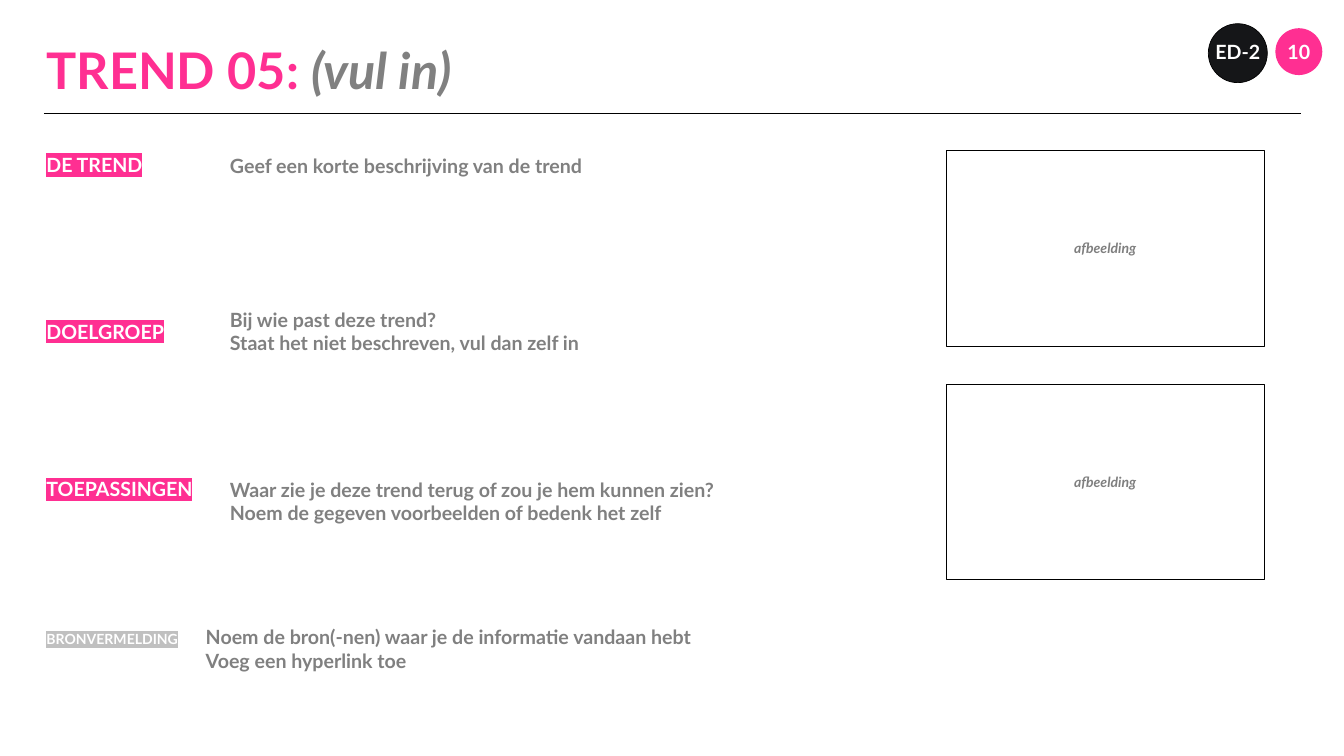
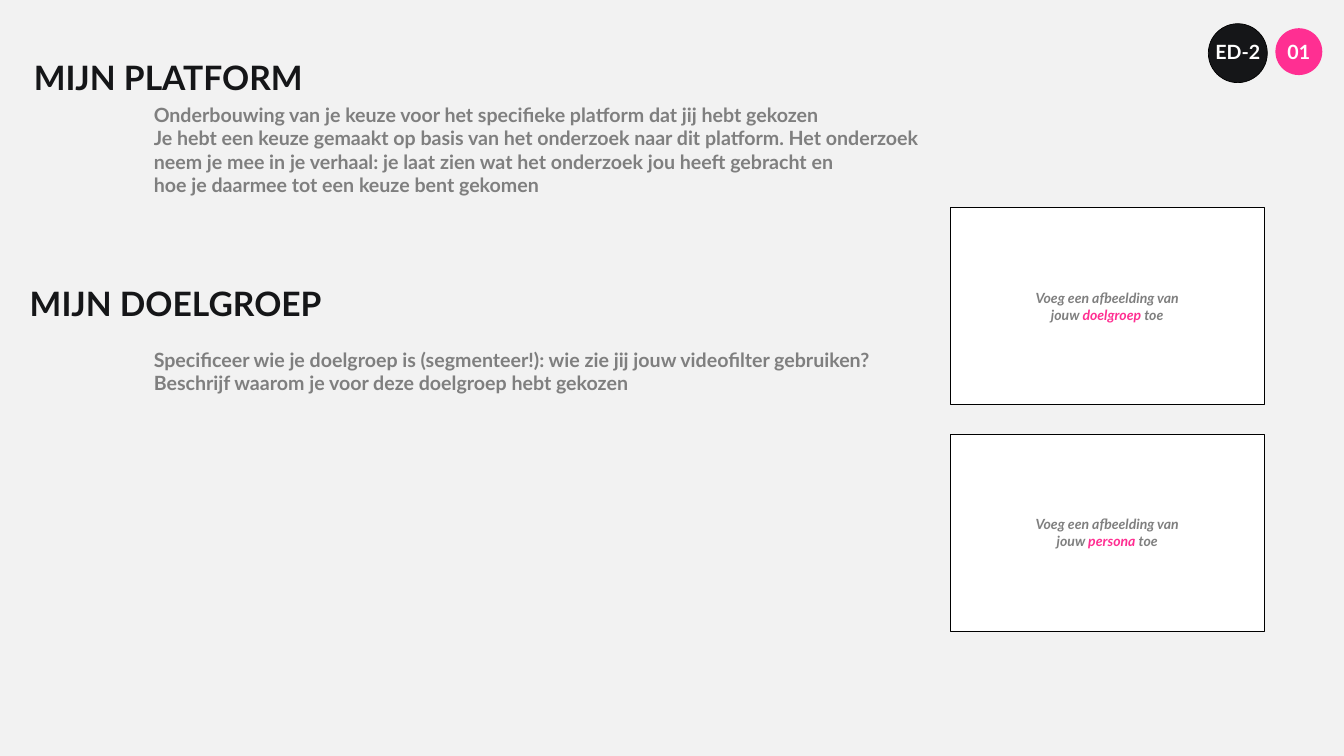
from lxml import etree
from pptx import Presentation
from pptx.dml.color import RGBColor
from pptx.enum import shapes, text
from pptx.oxml.ns import qn
from pptx.util import Emu, Pt

PX = 9144  # 100 px to the inch
WIDE, HIGH = 2665, 1500
FONT = "Lato"
PINK, INK, BLACK, WHITE = "FF2F92", "151618", "000000", "FFFFFF"
GREY, MID, SILVER, PALE = "808080", "7F7F7F", "C0C0C0", "F2F2F2"
BODY, NOTE, HEAD, TITLE = 28, 20, 48, 72
LEFT = 87


def px(*nums):
    return [Emu(n * PX) for n in nums]


def rgb(code):
    return RGBColor.from_string(code)


def style(run, size, color, italic=False, mark=None):
    font = run.font
    font.name, font.size = FONT, Pt(size)
    font.bold, font.italic = True, italic
    font.color.rgb = rgb(color)
    if mark:
        light = etree.Element(qn("a:highlight"))
        etree.SubElement(light, qn("a:srgbClr"), val=mark)
        run._r.rPr.find(qn("a:solidFill")).addnext(light)


def extend(para, words, *look):
    """Add a run with its own look to a paragraph."""
    run = para.add_run()
    run.text = words
    style(run, *look)


def write(shape, words, size, color, italic=False, mark=None, wrap=False,
          align=text.PP_ALIGN.LEFT, grow=True):
    frame = shape.text_frame
    frame.text = words
    frame.word_wrap = wrap
    frame.auto_size = (text.MSO_AUTO_SIZE.SHAPE_TO_FIT_TEXT if grow
                       else text.MSO_AUTO_SIZE.NONE)
    frame.vertical_anchor = (text.MSO_ANCHOR.TOP if wrap
                             else text.MSO_ANCHOR.MIDDLE)
    inset, = px(5 if wrap else 6)
    frame.margin_left = frame.margin_right = inset
    frame.margin_top = frame.margin_bottom = inset
    for para in frame.paragraphs:
        para.alignment = align
        for run in para.runs:
            style(run, size, color, italic, mark)
    return frame


def label(slide, box, words, size, color, **opts):
    return write(slide.shapes.add_textbox(*px(*box)), words, size, color, **opts)


def title(slide, box, words, size, color, **opts):
    shape = slide.shapes.title
    shape.left, shape.top, shape.width, shape.height = px(*box)
    return write(shape, words, size, color, **opts)


def plain(slide, kind, box, fill, line=None):
    shape = slide.shapes.add_shape(kind, *px(*box))
    shape.shadow.inherit = False
    shape.fill.solid()
    shape.fill.fore_color.rgb = rgb(fill)
    if line:
        shape.line.color.rgb = rgb(line)
        shape.line.width = Pt(1)
    else:
        shape.line.fill.background()
    return shape


def badges(slide, number):
    """Draw the course mark and the page number at the top right."""
    for box, fill, line, words in (
            ((2396, 47, 117, 117), INK, BLACK, "ED-2"),
            ((2529, 56, 93, 93), PINK, None, number)):
        disc = plain(slide, shapes.MSO_SHAPE.OVAL, box, fill, line)
        frame = write(disc, words, BODY, WHITE, grow=False,
                      align=text.PP_ALIGN.CENTER)
        # Both texts share one centre line, at 102 px
        low = box[1] + box[3] // 2 - 102
        frame.margin_bottom, = px(6 + 2 * low)


def rule(slide, left, top, right):
    line = slide.shapes.add_connector(
        shapes.MSO_CONNECTOR.STRAIGHT, *px(left, top, right, top))
    line.line.color.rgb = rgb(BLACK)
    line.line.width = Pt(1)
    etree.SubElement(line._element.spPr, qn("a:effectLst"))


def frames(slide, box, pitch, size, words):
    """Stack image frames, each with a caption of the given size centred in it."""
    left, top, wide, high = box
    dx, dy = (wide - size[0]) // 2, (high - size[1]) // 2
    notes = []
    for row, note in enumerate(words):
        y = top + row * pitch
        plain(slide, shapes.MSO_SHAPE.RECTANGLE, (left, y, wide, high),
              WHITE, BLACK)
        notes.append(label(slide, (left + dx, y + dy, *size), note, NOTE, MID,
                           italic=True, align=text.PP_ALIGN.CENTER))
    return notes


def topic(slide, top, name, box, words, size=BODY, mark=PINK):
    """Place a marked topic name with its explanation beside it."""
    label(slide, (LEFT, top, 431, 58), name, size, WHITE, mark=mark, wrap=True)
    label(slide, box, words, BODY, GREY)


def trend(slide):
    head = title(slide, (LEFT, 73, 2168, 131), "TREND 05: ", TITLE, PINK,
                 wrap=True)
    extend(head.paragraphs[0], "(vul in)", TITLE, GREY, True)
    rule(slide, LEFT, 224, 2579)
    badges(slide, "10")
    topic(slide, 299, "DE TREND", (450, 299, 721, 58),
          "Geef een korte beschrijving van de trend")
    topic(slide, 629, "DOELGROEP", (450, 605, 736, 105),
          "Bij wie past deze trend?\v"
          "Staat het niet beschreven, vul dan zelf in")
    topic(slide, 942, "TOEPASSINGEN", (450, 942, 988, 105),
          "Waar zie je deze trend terug of zou je hem kunnen zien?\n"
          "Noem de gegeven voorbeelden of bedenk het zelf")
    topic(slide, 1247, "BRONVERMELDING", (402, 1235, 990, 105),
          "Noem de bron(-nen) waar je de informatie vandaan hebt\n"
          "Voeg een hyperlink toe", NOTE, SILVER)
    frames(slide, (1876, 299, 631, 388), 463, (307, 45), ["afbeelding"] * 2)


def platform(slide):
    slide.background.fill.solid()
    slide.background.fill.fore_color.rgb = rgb(PALE)
    title(slide, (61, 106, 555, 92), "MIJN PLATFORM", HEAD, INK)
    badges(slide, "01")
    label(slide, (299, 197, 1553, 200),
          "Onderbouwing van je keuze voor het specifieke platform dat jij hebt gekozen\n"
          "Je hebt een keuze gemaakt op basis van het onderzoek naar dit platform. Het onderzoek\n"
          "neem je mee in je verhaal: je laat zien wat het onderzoek jou heeft gebracht en\n"
          "hoe je daarmee tot een keuze bent gekomen", BODY, MID)
    label(slide, (53, 555, 598, 92), "MIJN DOELGROEP", HEAD, INK)
    label(slide, (299, 684, 1457, 105),
          "Specificeer wie je doelgroep is (segmenteer!): wie zie jij jouw videofilter gebruiken?\n"
          "Beschrijf waarom je voor deze doelgroep hebt gekozen", BODY, MID)
    notes = frames(slide, (1884, 412, 623, 391), 449, (307, 79),
                   ["Voeg een afbeelding van\njouw "] * 2)
    for note, goal in zip(notes, ("doelgroep", "persona")):
        extend(note.paragraphs[1], goal, NOTE, PINK, True)
        extend(note.paragraphs[1], " toe", NOTE, MID, True)


def main():
    deck = Presentation()
    deck.slide_width, deck.slide_height = px(WIDE, HIGH)
    for build in (trend, platform):
        build(deck.slides.add_slide(deck.slide_layouts[5]))
    deck.save("out.pptx")


if __name__ == "__main__":
    main()
